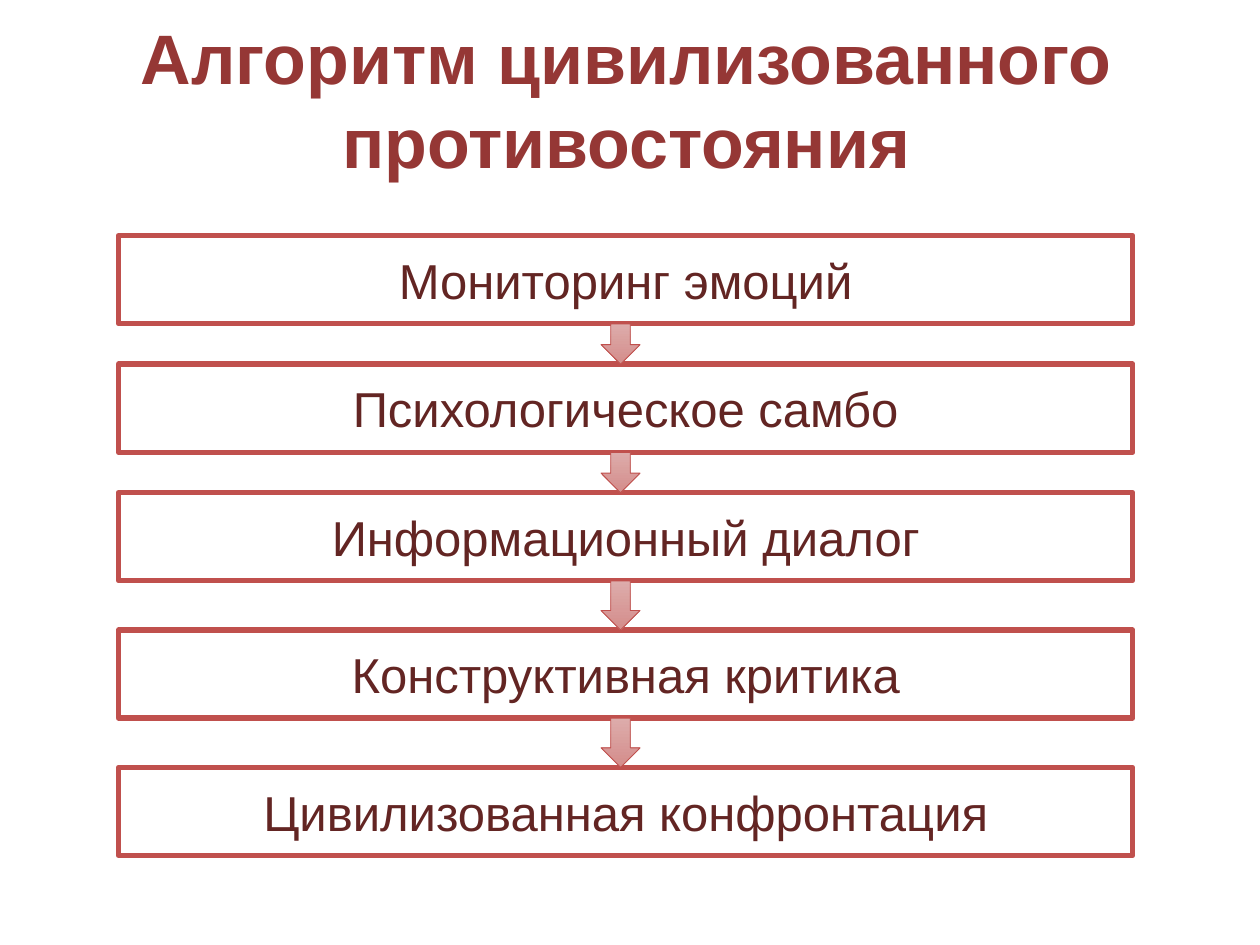
from pptx import Presentation
from pptx.dml.color import RGBColor
from pptx.enum.shapes import MSO_SHAPE
from pptx.enum.text import MSO_ANCHOR, PP_ALIGN
from pptx.util import Inches, Pt

TITLE = "Алгоритм цивилизованного противостояния"
# Step text and top of its box, in inches
STEPS = [
    ("Мониторинг эмоций", 1.87),
    ("Психологическое самбо", 2.89),
    ("Информационный диалог", 3.91),
    ("Конструктивная критика", 5),
    ("Цивилизованная конфронтация", 6.09),
]
COLORS = {
    "title": "953735",
    "text": "632523",
    "box": "FFFFFF",
    "line": "C0504D",
    "arrow_top": "DDACAB",
    "arrow_bottom": "D48D8B",
}
BOX_LEFT, BOX_WIDTH, BOX_HEIGHT = 0.94, 8.05, 0.7
ARROW_LEFT, ARROW_WIDTH = 4.77, 0.31


def color(name):
    return RGBColor.from_string(COLORS[name])


def write(shape, text, size, color_name, bold=False):
    frame = shape.text_frame
    frame.word_wrap = True
    frame.vertical_anchor = MSO_ANCHOR.MIDDLE
    paragraph = frame.paragraphs[0]
    paragraph.text = text
    paragraph.alignment = PP_ALIGN.CENTER
    paragraph.font.name = "Arial"
    paragraph.font.size = Pt(size)
    paragraph.font.bold = bold
    paragraph.font.color.rgb = color(color_name)


def add_outlined(slide, kind, left, top, width, height, line_width):
    shape = slide.shapes.add_shape(
        kind, Inches(left), Inches(top), Inches(width), Inches(height))
    shape.shadow.inherit = False
    shape.line.color.rgb = color("line")
    shape.line.width = Pt(line_width)
    return shape


presentation = Presentation()
presentation.slide_width, presentation.slide_height = Inches(10), Inches(7.5)
slide = presentation.slides.add_slide(presentation.slide_layouts[6])

# Title
title = slide.shapes.add_textbox(
    Inches(0.47), Inches(0.16), Inches(9), Inches(1.25))
write(title, TITLE, 40, "title", bold=True)

# Step boxes
for text, top in STEPS:
    box = add_outlined(slide, MSO_SHAPE.RECTANGLE,
                       BOX_LEFT, top, BOX_WIDTH, BOX_HEIGHT, 3)
    box.fill.solid()
    box.fill.fore_color.rgb = color("box")
    write(box, text, 28, "text")

# Arrows filling the gaps between boxes
for (_, top), (_, next_top) in zip(STEPS, STEPS[1:]):
    arrow_top = top + BOX_HEIGHT
    arrow = add_outlined(slide, MSO_SHAPE.DOWN_ARROW, ARROW_LEFT, arrow_top,
                         ARROW_WIDTH, next_top - arrow_top, 0.5)
    arrow.fill.gradient()
    arrow.fill.gradient_angle = 270
    for stop, name in zip(arrow.fill.gradient_stops,
                          ("arrow_top", "arrow_bottom")):
        stop.color.rgb = color(name)

presentation.save("out.pptx")
